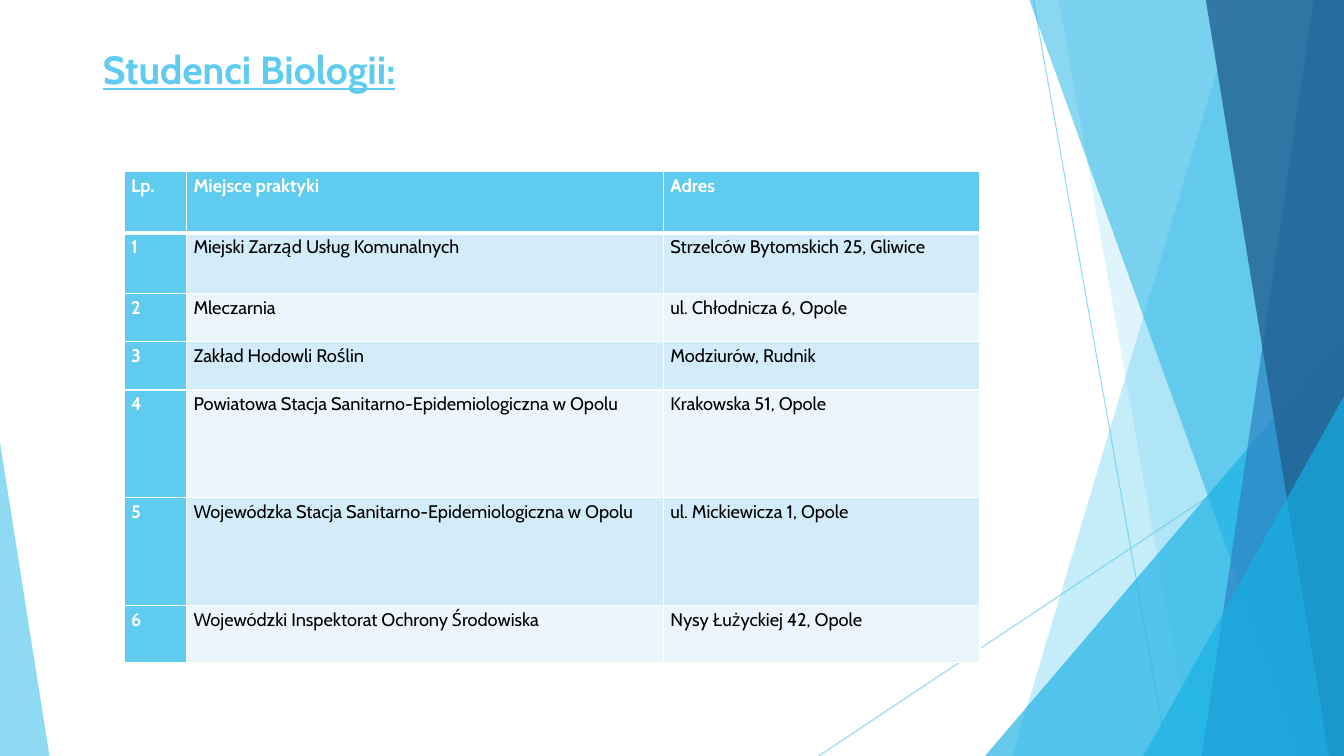
"""Builds a slide listing the work placements of biology students."""
from dataclasses import dataclass

from lxml.etree import SubElement
from pptx import Presentation
from pptx.dml.color import RGBColor
from pptx.enum.shapes import MSO_CONNECTOR as Connector, MSO_SHAPE as Shape
from pptx.enum.text import MSO_ANCHOR as Anchor, PP_ALIGN as Align
from pptx.oxml.ns import qn
from pptx.util import Inches, Pt

TITLE = "Studenci Biologii:"
PLACEMENTS = [
    ("Lp.", "Miejsce praktyki", "Adres"),
    ("1", "Miejski Zarząd Usług Komunalnych", "Strzelców Bytomskich 25, Gliwice"),
    ("2", "Mleczarnia", "ul. Chłodnicza 6, Opole"),
    ("3", "Zakład Hodowli Roślin", "Modziurów, Rudnik"),
    ("4", "Powiatowa Stacja Sanitarno-Epidemiologiczna w Opolu", "Krakowska 51, Opole"),
    ("5", "Wojewódzka Stacja Sanitarno-Epidemiologiczna w Opolu", "ul. Mickiewicza 1, Opole"),
    ("6", "Wojewódzki Inspektorat Ochrony Środowiska", "Nysy Łużyckiej 42, Opole"),
]
COLUMNS = (0.62, 4.73, 3.14)
ROWS = (0.61, 0.6, 0.48, 0.48, 1.07, 1.07, 0.56)
TABLE_AT = (1.23, 1.7)
TITLE_BOX = {"left": 0.92, "top": 0.4, "width": 11.5, "height": 0.37}
WIDTH, HEIGHT = 13.33, 7.5


@dataclass(frozen=True)
class Theme:
    font: str = "Cabin"
    title_size: int = 28
    cell_size: int = 13
    sky: str = "5FCBEF"
    azure: str = "17B0E4"
    blue: str = "2E83C3"
    navy: str = "226292"
    white: str = "FFFFFF"
    black: str = "000000"
    bands: tuple = ("EAF6FC", "D2ECF9")


THEME = Theme()
RAYS = [((10.25, 0), (11.58, HEIGHT)), ((WIDTH, 4.03), (8.12, HEIGHT))]
SHARDS = [
    ("band", 12.28, 10.04, THEME.sky, 36),
    ("band", 10.5, 11.83, THEME.sky, 20),
    ("wedge", 9.77, 3.56, 4.17, 1, THEME.azure, 66),
    ("band", 10.21, 12.91, THEME.azure, 50),
    ("band", 13.03, 11.92, THEME.blue, 70),
    ("band", 11.96, 13.18, THEME.navy, 80),
    ("wedge", 11.34, 1.99, 3.57, 1, THEME.azure, 66),
    ("wedge", 0, 0.49, 3.11, 0, THEME.sky, 70),
]


def assign(target, values):
    for name, value in values.items():
        setattr(target, name, value)


def rgb(code):
    return RGBColor.from_string(code)


def fade(owner, percent):
    color = next(owner.iter(qn("a:srgbClr")))
    SubElement(color, qn("a:alpha"), val=str(percent * 1000))


def write(para, text, size, color, bold, underline=False):
    span = para.add_run()
    span.text = text
    assign(span.font, {"name": THEME.font, "size": Pt(size), "bold": bold, "underline": underline})
    span.font.color.rgb = rgb(color)


def draw_ray(page, start, end):
    ray = page.shapes.add_connector(Connector.STRAIGHT, *map(Inches, start + end))
    ray.line.width = Pt(0.75)
    ray.line.color.rgb = rgb(THEME.sky)
    fade(ray.line._get_or_add_ln(), 70)
    SubElement(ray._element.spPr, qn("a:effectLst"))


def band(page, top_x, bottom_x):
    builder = page.shapes.build_freeform(Inches(top_x), 0)
    corners = [(WIDTH, 0), (WIDTH, HEIGHT), (bottom_x, HEIGHT)]
    builder.add_line_segments([(Inches(x), Inches(y)) for x, y in corners], close=True)
    return builder.convert_to_shape()


def wedge(page, left, width, height, apex):
    shape = page.shapes.add_shape(
        Shape.ISOSCELES_TRIANGLE, *map(Inches, (left, HEIGHT - height, width, height)))
    shape.adjustments[0] = apex
    return shape


def draw_shard(page, kind, *values):
    *place, color, opacity = values
    shape = {"band": band, "wedge": wedge}[kind](page, *place)
    shape.shadow.inherit = False
    shape.fill.solid()
    shape.fill.fore_color.rgb = rgb(color)
    shape.line.fill.background()
    fade(shape._element.spPr, opacity)


def draw_title(page):
    title = page.shapes.title
    assign(title, {name: Inches(value) for name, value in TITLE_BOX.items()})
    assign(title.text_frame, {"vertical_anchor": Anchor.TOP, "word_wrap": True})
    para = title.text_frame.paragraphs[0]
    para.alignment = Align.LEFT
    write(para, TITLE, THEME.title_size, THEME.sky, True, True)
    page.shapes._spTree.append(title._element)


def set_borders(cell, widths):
    props = cell._tc.get_or_add_tcPr()
    for index, (side, points) in enumerate(widths.items()):
        line = props.makeelement(qn(f"a:ln{side}"), {"w": str(Pt(points))})
        fill = SubElement(line, qn("a:solidFill"))
        SubElement(fill, qn("a:srgbClr"), val=THEME.white)
        props.insert(index, line)


def fill_cell(cell, text, row, column):
    strong = row == 0 or column == 0
    assign(cell, {"margin_left": Inches(0.07), "margin_right": Inches(0.07),
                  "margin_top": 0, "margin_bottom": 0, "vertical_anchor": Anchor.TOP})
    cell.fill.solid()
    cell.fill.fore_color.rgb = rgb(THEME.sky if strong else THEME.bands[row % 2])
    para = cell.text_frame.paragraphs[0]
    para.line_spacing = 1.15
    write(para, text, THEME.cell_size, THEME.white if strong else THEME.black, strong)
    set_borders(cell, {"L": 1, "R": 1, "T": 3 if row == 1 else 1, "B": 3 if row == 0 else 1})


def draw_table(page):
    area = map(Inches, (*TABLE_AT, sum(COLUMNS), sum(ROWS)))
    table = page.shapes.add_table(len(ROWS), len(COLUMNS), *area).table
    assign(table, {"first_row": True, "first_col": True, "horz_banding": False})
    for column, width in zip(table.columns, COLUMNS):
        column.width = Inches(width)
    for row, height in zip(table.rows, ROWS):
        row.height = Inches(height)
    for row, record in enumerate(PLACEMENTS):
        for column, text in enumerate(record):
            fill_cell(table.cell(row, column), text, row, column)


def main():
    deck = Presentation()
    assign(deck, {"slide_width": Inches(WIDTH), "slide_height": Inches(HEIGHT)})
    page = deck.slides.add_slide(deck.slide_layouts[5])
    for start, end in RAYS:
        draw_ray(page, start, end)
    for shard in SHARDS:
        draw_shard(page, *shard)
    draw_title(page)
    draw_table(page)
    deck.save("out.pptx")


if __name__ == "__main__":
    main()
